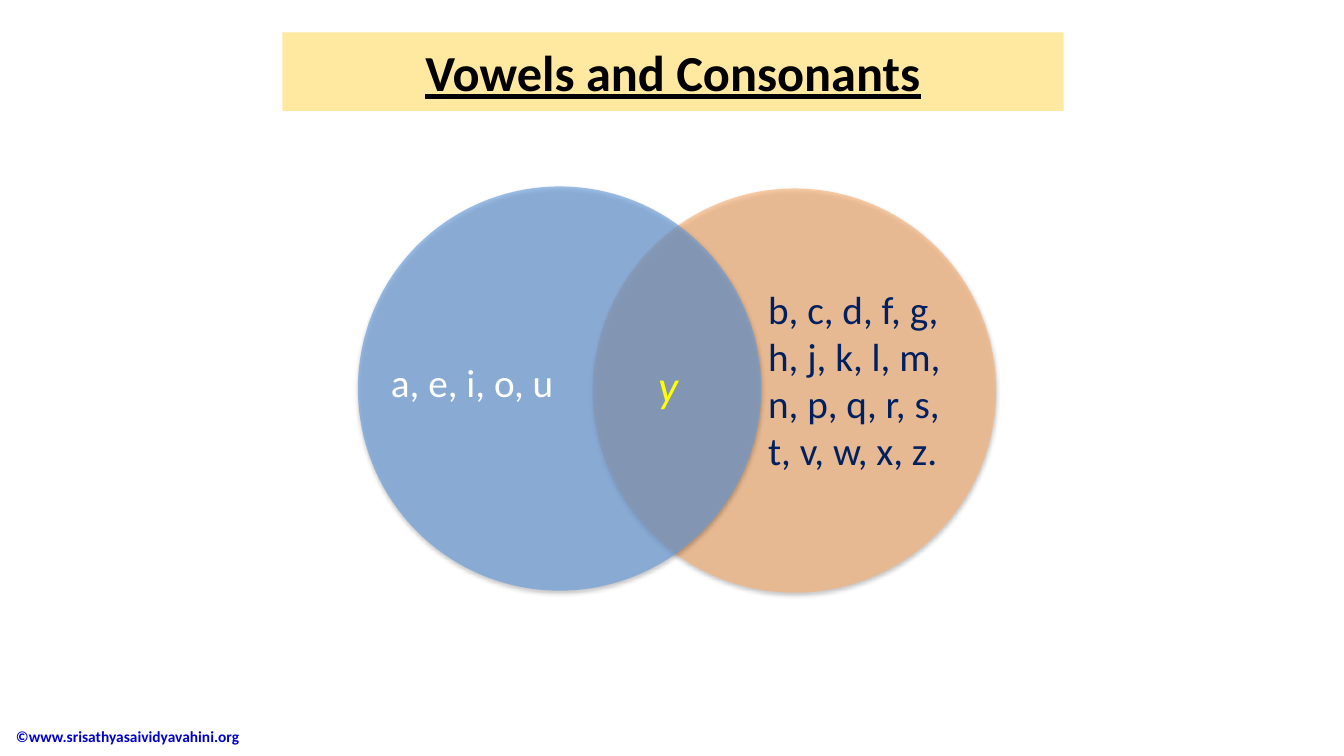
from typing import NamedTuple

from lxml import etree
from pptx import Presentation
from pptx.dml.color import RGBColor
from pptx.enum import shapes, text
from pptx.oxml import ns
from pptx.util import Inches, Pt

FONT = "Calibri"
BLACK = RGBColor(0x00, 0x00, 0x00)
WHITE = RGBColor(0xFF, 0xFF, 0xFF)
CREAM = RGBColor(0xFF, 0xE8, 0x9F)
ORANGE = RGBColor(0xFA, 0xB2, 0x76)
BLUE = RGBColor(0x67, 0x9B, 0xDB)
NAVY = RGBColor(0x00, 0x20, 0x60)
YELLOW = RGBColor(0xFF, 0xFF, 0x00)
LINK = RGBColor(0x00, 0x00, 0xCC)


class Box(NamedTuple):
    left: float
    top: float
    width: float
    height: float


class Ring(NamedTuple):
    box: Box
    color: RGBColor


class Label(NamedTuple):
    box: Box
    words: str
    size: int
    color: RGBColor
    bold: bool = False
    italic: bool = False
    anchor: text.MSO_ANCHOR = text.MSO_ANCHOR.TOP


RINGS = [
    Ring(Box(5.88, 1.87, 4, 4.01), ORANGE),
    Ring(Box(3.55, 1.85, 4, 4.01), BLUE),
]

LABELS = [
    Label(Box(3.78, 3.51, 1.87, 0.57), "a, e, i, o, u", 28, WHITE),
    Label(Box(7.52, 2.78, 1.97, 1.99),
          "b, c, d, f, g, h, j, k, l, m, n, p, q, r, s, t, v, w, x, z.",
          28, NAVY),
    Label(Box(6.43, 3.5, 0.44, 0.64), "y", 32, YELLOW, italic=True),
    Label(Box(0.06, 7.1, 3.53, 0.41), "©www.srisathyasaividyavahini.org",
          11, LINK, bold=True, anchor=text.MSO_ANCHOR.MIDDLE),
]


def place(box: Box) -> list[int]:
    return [Inches(side) for side in box]


def add_run(para, words: str, size: int, color: RGBColor):
    run = para.add_run()
    run.text = words
    run.font.name = FONT
    run.font.size = Pt(size)
    run.font.color.rgb = color
    return run


def add_ring(slide, ring: Ring) -> None:
    disc = slide.shapes.add_shape(shapes.MSO_SHAPE.OVAL, *place(ring.box))
    disc.fill.solid()
    disc.fill.fore_color.rgb = ring.color
    disc.line.fill.background()
    disc.shadow.inherit = False
    # Fill transparency
    tint = disc.fill._xPr.find(".//" + ns.qn("a:srgbClr"))
    etree.SubElement(tint, ns.qn("a:alpha"), val="64000")
    # Soft shadow below
    effect = disc.fill._xPr.find(ns.qn("a:effectLst"))
    shade = etree.SubElement(
        effect, ns.qn("a:outerShdw"), blurRad=str(Pt(3.1)),
        dist=str(Pt(1.8)), dir="5400000", rotWithShape="0")
    tone = etree.SubElement(shade, ns.qn("a:srgbClr"), val=str(BLACK))
    etree.SubElement(tone, ns.qn("a:alpha"), val="35000")


def add_label(slide, label: Label) -> None:
    frame = slide.shapes.add_textbox(*place(label.box)).text_frame
    frame.word_wrap = True
    frame.vertical_anchor = label.anchor
    run = add_run(frame.paragraphs[0], label.words, label.size, label.color)
    run.font.bold = label.bold
    run.font.italic = label.italic


def set_title(slide, box: Box, words: str) -> None:
    title = slide.shapes.title
    title.left, title.top, title.width, title.height = place(box)
    title.fill.solid()
    title.fill.fore_color.rgb = CREAM
    title.text_frame.vertical_anchor = text.MSO_ANCHOR.MIDDLE
    para = title.text_frame.paragraphs[0]
    para.alignment = text.PP_ALIGN.CENTER
    run = add_run(para, words, 36, BLACK)
    run.font.bold = True
    run.font.underline = True


def main() -> None:
    deck = Presentation()
    deck.slide_width = Inches(13.33)
    deck.slide_height = Inches(7.5)
    slide = deck.slides.add_slide(deck.slide_layouts[5])

    # Heading
    set_title(slide, Box(2.8, 0.32, 7.75, 0.78), "Vowels and Consonants")

    # Venn diagram
    for ring in RINGS:
        add_ring(slide, ring)

    # Letters and copyright line
    for label in LABELS:
        add_label(slide, label)

    deck.save("out.pptx")


if __name__ == "__main__":
    main()
